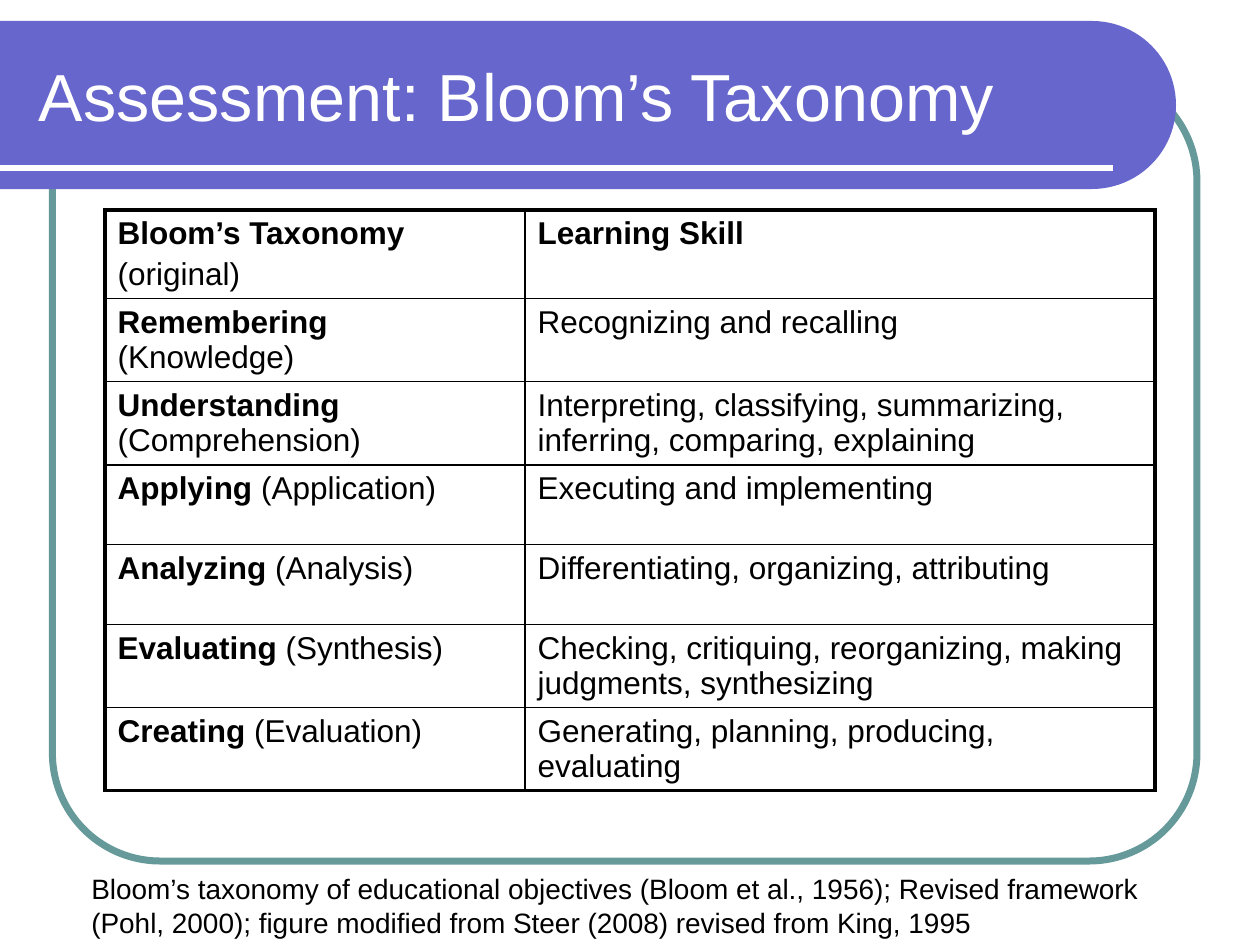
from dataclasses import dataclass
from math import cos, pi, sin

from lxml import etree
from pptx import Presentation
from pptx.dml.color import RGBColor
from pptx.enum.shapes import MSO_CONNECTOR, MSO_SHAPE
from pptx.enum.text import MSO_ANCHOR, PP_ALIGN
from pptx.oxml.ns import qn
from pptx.util import Emu, Pt

ROUNDED = MSO_SHAPE.ROUNDED_RECTANGLE
STRAIGHT = MSO_CONNECTOR.STRAIGHT
MIDDLE = MSO_ANCHOR.MIDDLE
LEFT = PP_ALIGN.LEFT
EMU_PER_PX = 7620  # 120 px to the inch
TITLE_ONLY = 5


@dataclass(frozen=True)
class Theme:
    font: str = "Arial"
    band: str = "6666CC"
    frame: str = "669999"
    light: str = "FFFFFF"
    ink: str = "000000"
    title_size: int = 38
    table_size: int = 18
    source_size: int = 16
    frame_line: float = 4
    rule_line: float = 3
    outer_border: float = 2.25
    inner_border: float = 1


THEME = Theme()

# Each row: lines of (bold, plain) text for the level, then for the skill
ROWS = [
    ([("Bloom’s Taxonomy", ""), ("", "(original)")], [("Learning Skill", "")]),
    ([("Remembering ", "(Knowledge)")], [("", "Recognizing and recalling")]),
    ([("Understanding", " (Comprehension)")],
     [("", "Interpreting, classifying, summarizing, inferring, comparing, explaining")]),
    ([("Applying", " (Application)")], [("", "Executing and implementing")]),
    ([("Analyzing", " (Analysis)")],
     [("", "Differentiating, organizing, attributing")]),
    ([("Evaluating", " (Synthesis)")],
     [("", "Checking, critiquing, reorganizing, making judgments, synthesizing")]),
    ([("Creating", " (Evaluation)")],
     [("", "Generating, planning, producing, evaluating")]),
]


def px(length):
    return Emu(round(length * EMU_PER_PX))


def rgb(value):
    return RGBColor.from_string(value)


def style(paragraph, size, color):
    paragraph.alignment = LEFT
    paragraph.font.name = THEME.font
    paragraph.font.size = Pt(size)
    paragraph.font.color.rgb = rgb(color)


def add_frame(slide, x, y, w, h):
    frame = slide.shapes.add_shape(ROUNDED, px(x), px(y), px(w), px(h))
    frame.adjustments[0] = 0.137
    frame.shadow.inherit = False
    frame.fill.background()
    frame.line.color.rgb = rgb(THEME.frame)
    frame.line.width = Pt(THEME.frame_line)


def add_band(slide, x, y, w, h):
    """Band with a half-round right end and a rule near its foot."""
    radius = h / 2
    steps = 48
    angles = [pi * step / steps - pi / 2 for step in range(steps + 1)]
    arc = [(px(x + w - radius + radius * cos(a)), px(y + radius + radius * sin(a)))
           for a in angles]
    outline = slide.shapes.build_freeform(px(x), px(y))
    outline.add_line_segments(arc + [(px(x), px(y + h))], close=True)
    band = outline.convert_to_shape()
    band.shadow.inherit = False
    band.fill.solid()
    band.fill.fore_color.rgb = rgb(THEME.band)
    band.line.fill.background()

    rule_y = px(y + h - 20)
    rule = slide.shapes.add_connector(
        STRAIGHT, px(x), rule_y, px(x + w - 60), rule_y)
    rule.line.color.rgb = rgb(THEME.light)
    rule.line.width = Pt(THEME.rule_line)
    etree.SubElement(rule.element.spPr, qn("a:effectLst"))


def place_title(slide, x, y, w, h, text):
    title = slide.shapes.title
    title.left, title.top, title.width, title.height = px(x), px(y), px(w), px(h)
    title.text_frame.text = text
    title.text_frame.vertical_anchor = MIDDLE
    style(title.text_frame.paragraphs[0], THEME.title_size, THEME.light)
    slide.shapes.element.append(title.element)  # in front of the band


def set_borders(cell, widths):
    """Draw the borders of a cell; widths run left, right, top, bottom."""
    properties = cell._tc.get_or_add_tcPr()
    for index, (side, width) in enumerate(zip("LRTB", widths)):
        border = etree.Element(qn(f"a:ln{side}"), w=str(Pt(width)))
        fill = etree.SubElement(border, qn("a:solidFill"))
        etree.SubElement(fill, qn("a:srgbClr"), val=THEME.ink)
        properties.insert(index, border)


def fill_cell(cell, lines):
    cell.fill.background()
    for index, (bold, plain) in enumerate(lines):
        if index == 0:
            paragraph = cell.text_frame.paragraphs[0]
        else:
            paragraph = cell.text_frame.add_paragraph()
            paragraph.space_before = Pt(3)
        style(paragraph, THEME.table_size, THEME.ink)
        for text, is_bold in ((bold, True), (plain, False)):
            if text:
                run = paragraph.add_run()
                run.text = text
                run.font.bold = is_bold


def add_taxonomy_table(slide, x, y, w, h):
    table = slide.shapes.add_table(
        len(ROWS), 2, px(x), px(y), px(w), px(h)).table
    table.first_row = table.horz_banding = False
    level_width = w * 2 // 5
    table.columns[0].width = px(level_width)
    table.columns[1].width = px(w - level_width)
    last_row = len(ROWS) - 1
    for r, row in enumerate(ROWS):
        for c, lines in enumerate(row):
            cell = table.cell(r, c)
            fill_cell(cell, lines)
            on_edge = (c == 0, c == 1, r == 0, r == last_row)
            set_borders(cell, [THEME.outer_border if edge else THEME.inner_border
                               for edge in on_edge])


def add_source_note(slide, x, y, w, h, text):
    frame = slide.shapes.add_textbox(px(x), px(y), px(w), px(h)).text_frame
    frame.word_wrap = True
    frame.margin_left = px(57)
    frame.margin_top = px(10)
    frame.text = text
    style(frame.paragraphs[0], THEME.source_size, THEME.ink)


def main():
    presentation = Presentation()
    presentation.slide_width, presentation.slide_height = px(1200), px(900)
    slide = presentation.slides.add_slide(presentation.slide_layouts[TITLE_ONLY])
    add_frame(slide, 50, 70, 1090, 750)
    add_band(slide, 0, 20, 1120, 160)
    place_title(slide, 25, 30, 1052, 120, "Assessment: Bloom’s Taxonomy")
    add_taxonomy_table(slide, 100, 200, 1000, 7 * 76)
    add_source_note(
        slide, 30, 820, 1090, 80,
        "Bloom’s taxonomy of educational objectives (Bloom et al., 1956); "
        "Revised framework (Pohl, 2000); figure modified from Steer (2008) "
        "revised from King, 1995")
    presentation.save("out.pptx")


if __name__ == "__main__":
    main()
